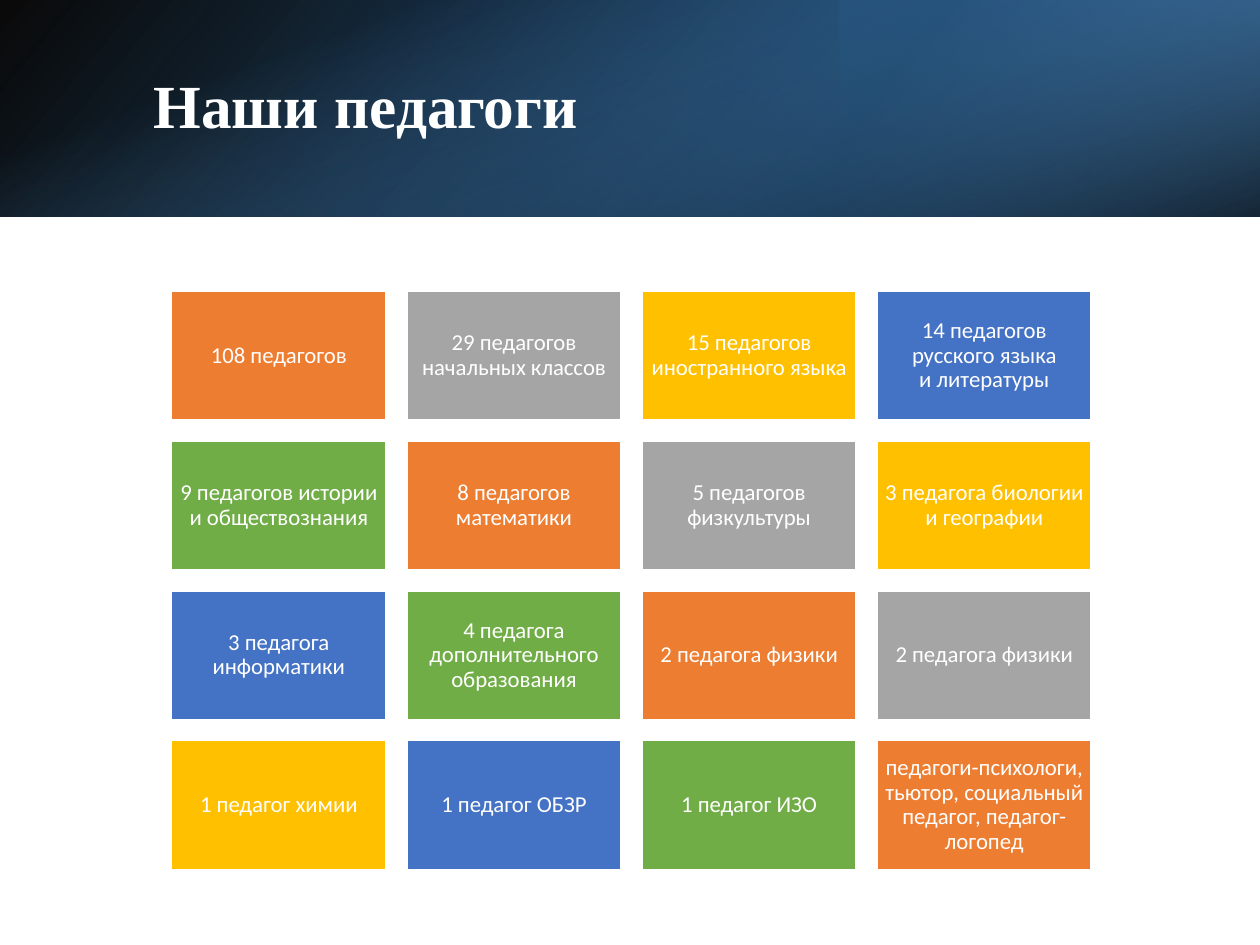
from dataclasses import dataclass

from lxml import etree
from pptx import Presentation
from pptx.dml.color import RGBColor
from pptx.enum.shapes import MSO_SHAPE
from pptx.enum.text import MSO_ANCHOR, PP_ALIGN
from pptx.oxml.ns import qn
from pptx.util import Cm, Pt

RECT = MSO_SHAPE.RECTANGLE
MIDDLE = MSO_ANCHOR.MIDDLE
LEFT, CENTER = PP_ALIGN.LEFT, PP_ALIGN.CENTER

TITLE = "Наши педагоги"
STAFF = [
    "108 педагогов",
    "29 педагогов начальных классов",
    "15 педагогов иностранного языка",
    "14 педагогов русского языка\nи литературы",
    "9 педагогов истории и обществознания",
    "8 педагогов математики",
    "5 педагогов физкультуры",
    "3 педагога биологии и географии",
    "3 педагога информатики",
    "4 педагога дополнительного образования",
    "2 педагога физики",
    "2 педагога физики",
    "1 педагог химии",
    "1 педагог ОБЗР",
    "1 педагог ИЗО",
    "педагоги-психологи, тьютор, социальный педагог, педагог-логопед",
]


@dataclass(frozen=True)
class Theme:
    white: str = "FFFFFF"
    tiles: tuple = ("ED7D31", "A5A5A5", "FFC000", "4472C4", "70AD47")
    head: str = "Times New Roman"
    body: str = "Calibri"
    head_size: int = 35
    body_size: int = 13


THEME = Theme()
WIDE, HIGH, BAND = 25.4, 19.05, 4.37  # slide size and banner height, cm
THIRD = WIDE / 3

# Banner layers: box in cm, rotation, mirrored, angle,
# stops as (position %, colour, opacity %)
LAYERS = [
    ((0, 0, WIDE, BAND), 0, True, 140,
     [(0, "000000", 96), (100, "2E75B6", 100)]),
    ((WIDE - THIRD, 0, THIRD, BAND), 180, True, 320,
     [(19, "1F4E79", 68), (100, "5B9BD5", 79)]),
    (((WIDE - BAND) / 2, (BAND - WIDE) / 2, BAND, WIDE), 90, False, 340,
     [(23, "5B9BD5", 0), (100, "000000", 74)]),
]

COLS, GAP = 4, 0.42
GRID_X, GRID_Y = 3.46, 5.87
TILE_W, TILE_H = 4.32, 2.6


def add_rect(slide, box):
    shape = slide.shapes.add_shape(RECT, *map(Cm, box))
    shape.shadow.inherit = False
    return shape


def write(shape, text, *, font, size, bold=False, align=LEFT, inset=None):
    frame = shape.text_frame
    frame.word_wrap = True
    frame.vertical_anchor = MIDDLE
    if inset is not None:
        frame.margin_left = frame.margin_right = Cm(inset)
        frame.margin_top = frame.margin_bottom = Cm(inset)
    para = frame.paragraphs[0]
    para.text = text
    para.alignment = align
    para.line_spacing = 0.9
    for run in para.runs:
        run.font.name = font
        run.font.size = Pt(size)
        run.font.bold = bold
        run.font.color.rgb = RGBColor.from_string(THEME.white)


def shade(shape, angle, stops):
    """Fill with a linear gradient whose stops carry their own opacity."""
    shape.fill.gradient()
    grad = shape.element.spPr.find(qn("a:gradFill"))
    group = grad.find(qn("a:gsLst"))
    for old in list(group):
        group.remove(old)
    for pos, color, alpha in stops:
        stop = etree.SubElement(group, qn("a:gs"), pos=str(pos * 1000))
        tint = etree.SubElement(stop, qn("a:srgbClr"), val=color)
        etree.SubElement(tint, qn("a:alpha"), val=str(alpha * 1000))
    line = grad.find(qn("a:lin"))
    line.set("ang", str(angle * 60000))
    line.set("scaled", "0")


def add_banner(slide):
    for box, turn, flip, angle, stops in LAYERS:
        layer = add_rect(slide, box)
        layer.line.fill.background()
        layer.rotation = turn
        if flip:
            layer.element.spPr.find(qn("a:xfrm")).set("flipH", "1")
        shade(layer, angle, stops)
    title = slide.shapes.add_textbox(Cm(2.85), Cm(0.97), Cm(20.93), Cm(2.44))
    write(title, TITLE, font=THEME.head, size=THEME.head_size, bold=True)


def add_tiles(slide):
    for i, text in enumerate(STAFF):
        row, col = divmod(i, COLS)
        tile = add_rect(slide, (GRID_X + col * (TILE_W + GAP),
                                GRID_Y + row * (TILE_H + GAP),
                                TILE_W, TILE_H))
        color = THEME.tiles[i % len(THEME.tiles)]
        tile.fill.solid()
        tile.fill.fore_color.rgb = RGBColor.from_string(color)
        tile.line.color.rgb = RGBColor.from_string(THEME.white)
        tile.line.width = Pt(1)
        write(tile, text, font=THEME.body, size=THEME.body_size,
              align=CENTER, inset=0.13)


def main():
    deck = Presentation()
    deck.slide_width, deck.slide_height = Cm(WIDE), Cm(HIGH)
    slide = deck.slides.add_slide(deck.slide_layouts[6])
    add_banner(slide)
    add_tiles(slide)
    deck.save("out.pptx")


if __name__ == "__main__":
    main()
